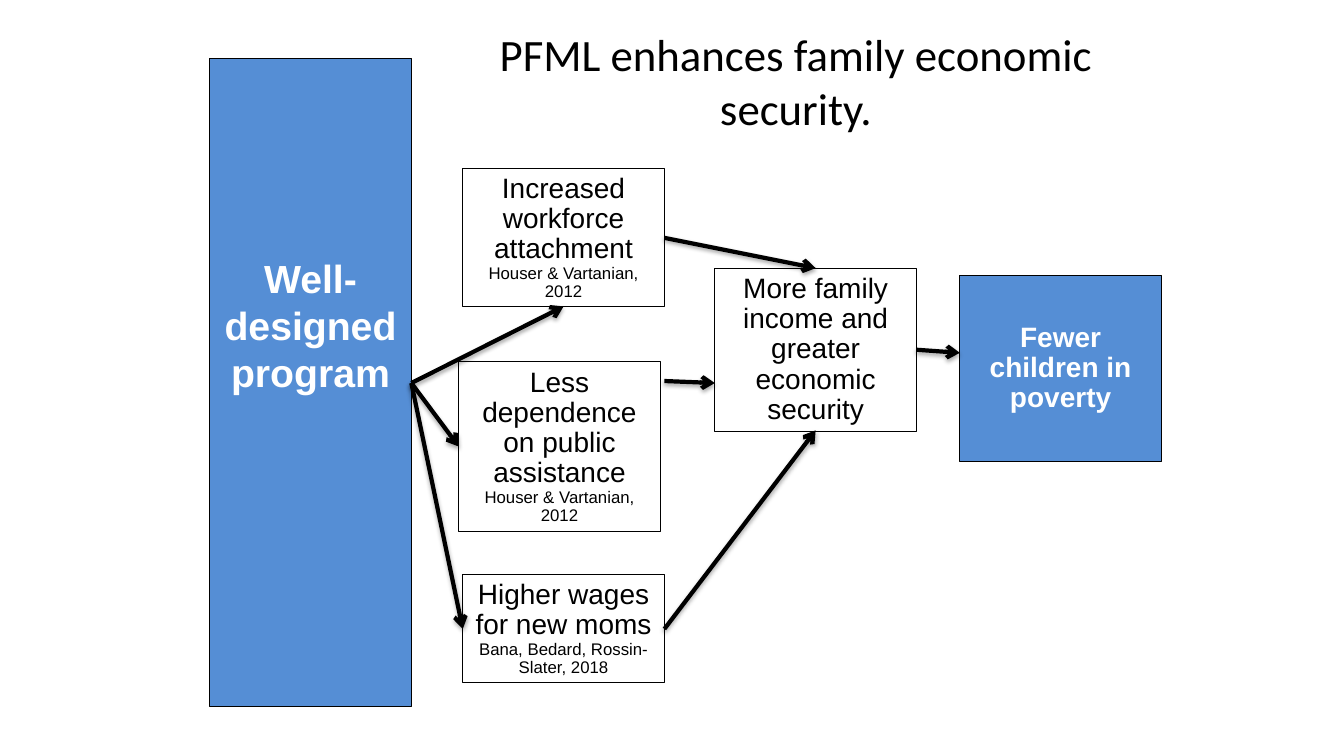
from lxml import etree
from pptx import Presentation
from pptx import util as u
from pptx.dml.color import RGBColor
from pptx.enum import shapes, text
from pptx.oxml import parse_xml

BLACK = RGBColor(0x00, 0x00, 0x00)
WHITE = RGBColor(0xFF, 0xFF, 0xFF)
BLUE = RGBColor(0x55, 0x8E, 0xD5)
DRAWING = "http://schemas.openxmlformats.org/drawingml/2006/main"
ARROW_SHADOW = (
    f'<a:effectLst xmlns:a="{DRAWING}">'
    '<a:outerShdw blurRad="40000" dist="23000" dir="5400000" rotWithShape="0">'
    '<a:srgbClr val="000000"><a:alpha val="35000"/></a:srgbClr>'
    '</a:outerShdw></a:effectLst>'
)


def write(paragraph, words, size=20, font="Arial", color=BLACK, bold=False, spacing=None):
    paragraph.alignment = text.PP_ALIGN.CENTER
    paragraph.line_spacing = spacing
    run = paragraph.add_run()
    run.text = words
    run.font.size = u.Pt(size)
    run.font.name = font
    run.font.color.rgb = color
    run.font.bold = bold


def add_box(left, top, height, fill=None):
    box = slide.shapes.add_shape(
        shapes.MSO_SHAPE.RECTANGLE,
        u.Inches(left), u.Inches(top), u.Inches(2), u.Inches(height))
    box.shadow.inherit = False
    if fill is None:
        box.fill.background()
    else:
        box.fill.solid()
        box.fill.fore_color.rgb = fill
    box.line.color.rgb = BLACK
    box.line.width = u.Pt(0.75)
    box.text_frame.word_wrap = True
    box.text_frame.vertical_anchor = text.MSO_ANCHOR.MIDDLE
    return box


presentation = Presentation()
presentation.slide_width = u.Inches(13.33)
presentation.slide_height = u.Inches(7.5)
slide = presentation.slides.add_slide(presentation.slide_layouts[5])

# Title
title = slide.shapes.title
title.left, title.top = u.Inches(4.44), u.Inches(0.21)
title.width, title.height = u.Inches(6.91), u.Inches(1.18)
title.text_frame.word_wrap = True
title.text_frame.auto_size = text.MSO_AUTO_SIZE.NONE
write(title.text_frame.paragraphs[0], "PFML enhances family economic security.",
      size=32, font="Calibri")

# Program column, with its label raised above the middle
program = add_box(2.08, 0.58, 6.43, BLUE)
program.text_frame.margin_bottom = u.Inches(1.2)
write(program.text_frame.paragraphs[0], "Well-designed program",
      size=28, color=WHITE, bold=True)

# Effects with their citations
effects = [
    (4.59, 1.67, 1.37, "Increased workforce attachment", "Houser & Vartanian, 2012"),
    (4.55, 3.59, 1.68, "Less dependence on public assistance", "Houser & Vartanian, 2012"),
    (4.59, 5.7, 1.07, "Higher wages for new moms", "Bana, Bedard, Rossin-Slater, 2018"),
]
for left, top, height, effect, citation in effects:
    frame = add_box(left, top, height).text_frame
    write(frame.paragraphs[0], effect, spacing=0.9)
    write(frame.add_paragraph(), citation, size=12, spacing=0.9)

# Outcomes
income = add_box(7.09, 2.66, 1.62)
write(income.text_frame.paragraphs[0],
      "More family income and greater economic security", spacing=0.9)
poverty = add_box(9.52, 2.73, 1.85, BLUE)
write(poverty.text_frame.paragraphs[0], "Fewer children in poverty",
      color=WHITE, bold=True, spacing=0.9)

# Arrows from program to effects to outcomes
program_exit = (4.08, 3.8)
arrows = [
    (program_exit, (5.59, 3.04)),
    (program_exit, (4.55, 4.43)),
    (program_exit, (4.59, 6.24)),
    ((6.59, 2.36), (8.09, 2.66)),
    ((6.59, 3.78), (7.09, 3.8)),
    ((6.59, 6.24), (8.09, 4.27)),
    ((9.09, 3.47), (9.52, 3.5)),
]
for start, end in arrows:
    arrow = slide.shapes.add_connector(
        shapes.MSO_CONNECTOR.STRAIGHT, *(u.Inches(value) for value in start + end))
    arrow.line.color.rgb = BLACK
    arrow.line.width = u.Pt(3)
    properties = arrow.element.spPr
    outline = properties.find(f"{{{DRAWING}}}ln")
    etree.SubElement(outline, f"{{{DRAWING}}}tailEnd", type="arrow")
    properties.append(parse_xml(ARROW_SHADOW))

presentation.save("out.pptx")
